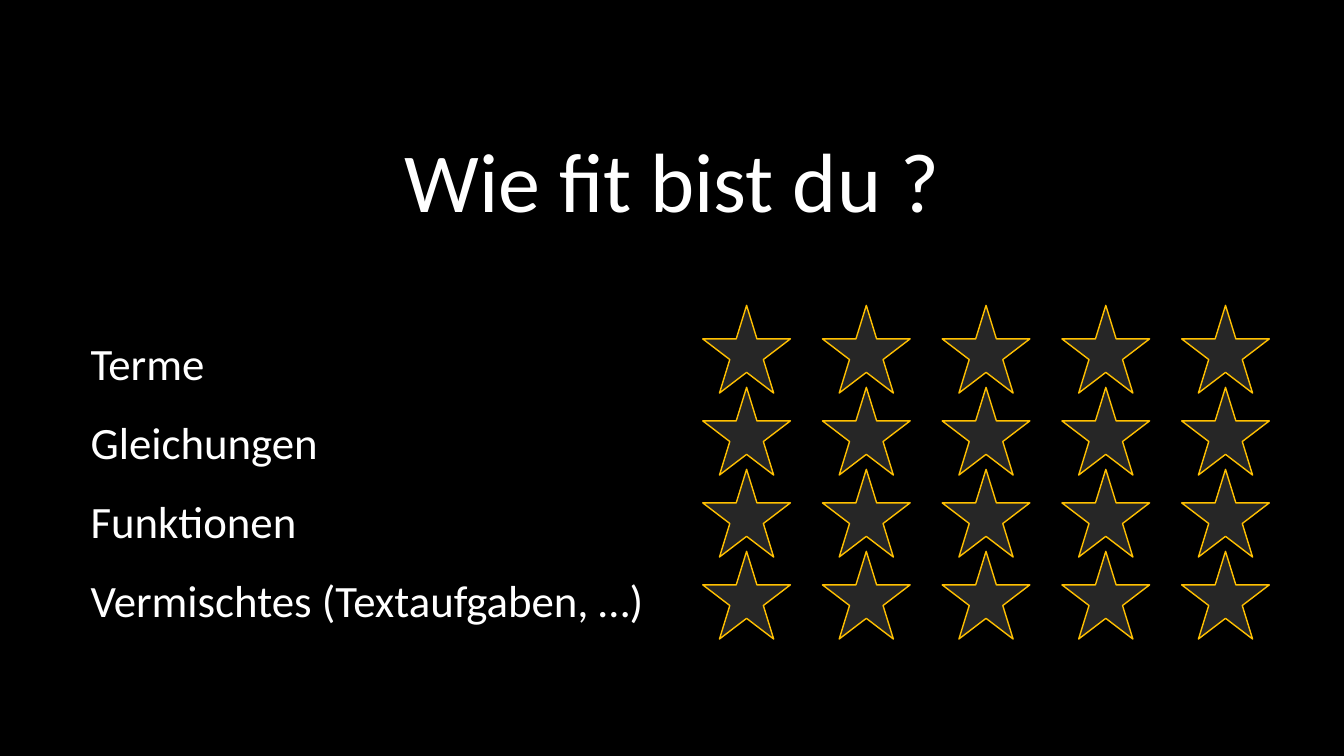
from pptx import Presentation
from pptx.dml.color import RGBColor
from pptx.enum.shapes import MSO_SHAPE
from pptx.enum.text import MSO_ANCHOR, PP_ALIGN
from pptx.util import Inches, Pt

TITLE = "Wie fit bist du ?"
TOPICS = ["Terme", "Gleichungen", "Funktionen", "Vermischtes (Textaufgaben, …)"]
STARS_PER_TOPIC = 5
STAR_SIZE = 0.87


def color(hex_code):
    return RGBColor.from_string(hex_code)


def write(paragraph, text, size, align=PP_ALIGN.LEFT, line_spacing=1.0, space_before=0):
    paragraph.alignment = align
    paragraph.line_spacing = line_spacing
    paragraph.space_before = Pt(space_before)
    run = paragraph.add_run()
    run.text = text
    run.font.name = "Calibri"
    run.font.size = Pt(size)
    run.font.color.rgb = color("FFFFFF")


def add_question_and_topics(slide, left, top, width, height):
    box = slide.shapes.add_textbox(Inches(left), Inches(top), Inches(width), Inches(height))
    frame = box.text_frame
    frame.word_wrap = True
    frame.vertical_anchor = MSO_ANCHOR.BOTTOM
    frame.margin_bottom = Inches(0.16)
    write(frame.paragraphs[0], TITLE, 60, align=PP_ALIGN.CENTER, line_spacing=0.9)
    for index, topic in enumerate(TOPICS):
        write(frame.add_paragraph(), topic, 32, line_spacing=1.47,
              space_before=57 if index == 0 else 0)


def add_star_grid(slide, left, top, width, height):
    """Place one group of stars per topic, spread evenly over the box."""
    column_step = (width - STAR_SIZE) / (STARS_PER_TOPIC - 1)
    row_step = (height - STAR_SIZE) / (len(TOPICS) - 1)
    for row in range(len(TOPICS)):
        rating = slide.shapes.add_group_shape()
        for column in range(STARS_PER_TOPIC):
            star = rating.shapes.add_shape(
                MSO_SHAPE.STAR_5_POINT,
                Inches(left + column * column_step), Inches(top + row * row_step),
                Inches(STAR_SIZE), Inches(STAR_SIZE))
            star.shadow.inherit = False
            star.fill.solid()
            star.fill.fore_color.rgb = color("262626")
            star.line.color.rgb = color("FFC000")
            star.line.width = Pt(1)


def main():
    presentation = Presentation()
    presentation.slide_width = Inches(13.33)
    presentation.slide_height = Inches(7.5)
    slide = presentation.slides.add_slide(presentation.slide_layouts[6])
    slide.background.fill.solid()
    slide.background.fill.fore_color.rgb = color("000000")
    add_question_and_topics(slide, 0.8, 1.12, 11.73, 5.26)
    add_star_grid(slide, 6.97, 3.03, 5.62, 3.31)
    presentation.save("out.pptx")


if __name__ == "__main__":
    main()
